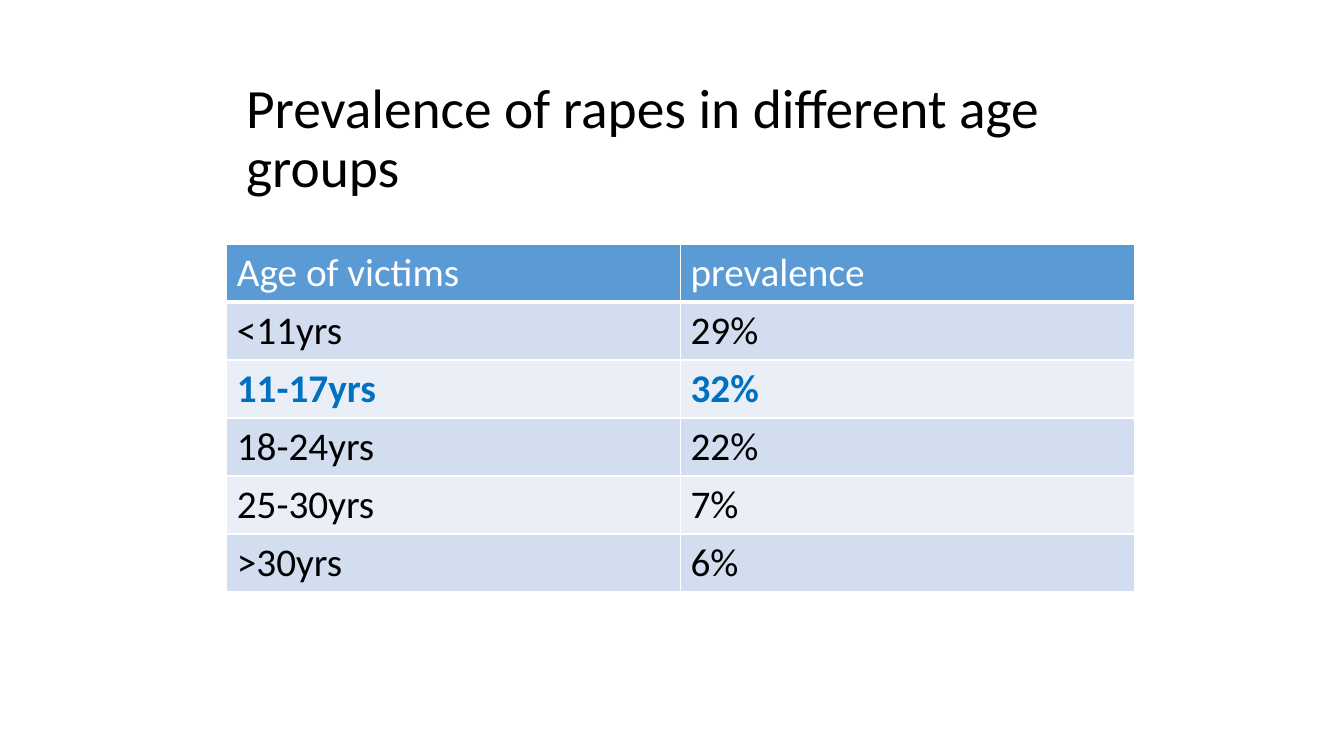
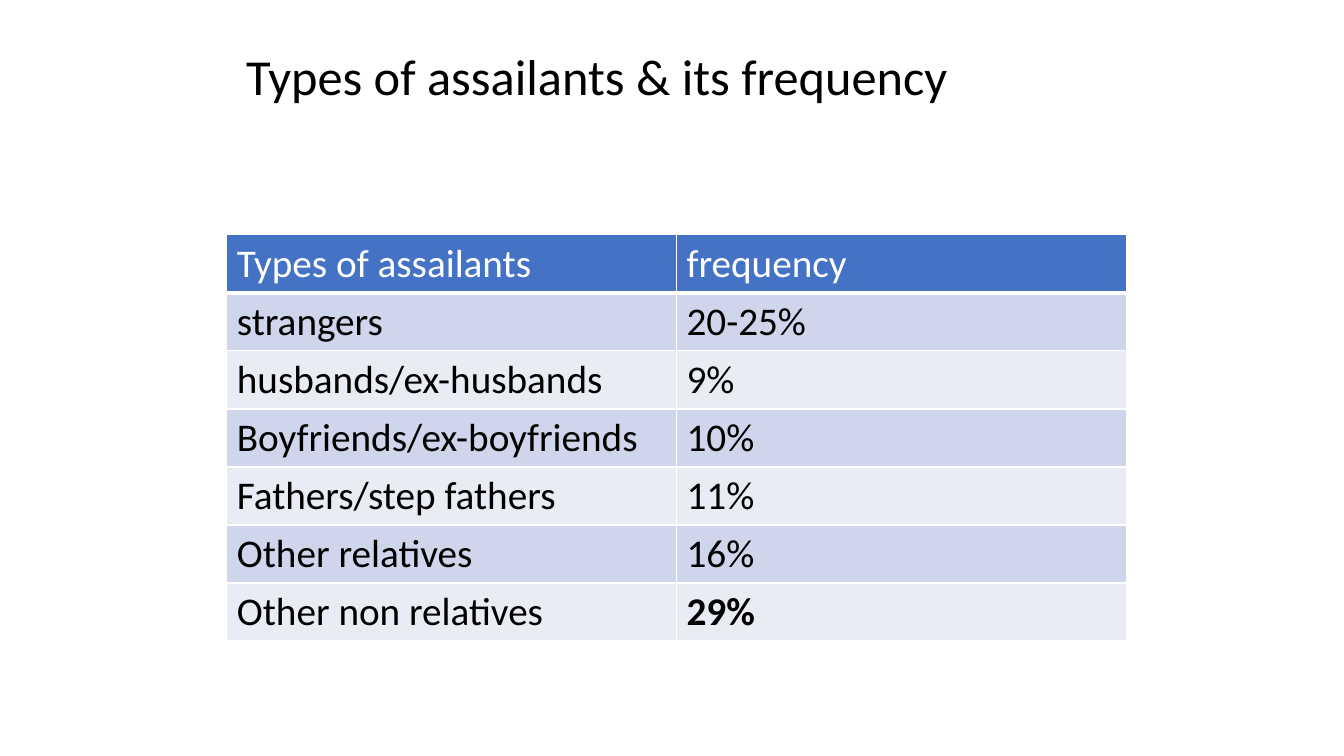
from dataclasses import dataclass

from lxml.etree import SubElement
from pptx import Presentation
from pptx.dml.color import RGBColor
from pptx.enum.text import MSO_ANCHOR, MSO_AUTO_SIZE, PP_ALIGN
from pptx.oxml.ns import qn
from pptx.util import Inches, Pt


@dataclass(frozen=True)
class Theme:
    font: str = "Calibri"
    text: str = "000000"
    on_header: str = "FFFFFF"
    rule: str = "FFFFFF"
    accent: str = "0070C0"
    # header, odd rows, even rows
    sky: tuple = ("5B9BD5", "D2DEEF", "EAEFF7")
    royal: tuple = ("4472C4", "CFD5EA", "E9EBF5")
    table_size: float = 28
    rule_width: float = 1
    header_rule_width: float = 3


THEME = Theme()
SLIDE_SIZE = (13.33, 7.5)
TITLE_LEFT, TITLE_WIDTH, TITLE_HEIGHT = 2.34, 8.92, 1.08
TABLE_LEFT, ROW_HEIGHT = 2.25, 0.57
TITLE_ONLY = 5

AGE_ROWS = [
    ("Age of victims", "prevalence"),
    ("<11yrs", "29%"),
    ("11-17yrs", "32%"),
    ("18-24yrs", "22%"),
    ("25-30yrs", "7%"),
    (">30yrs", "6%"),
]
AGE_PEAK = {"bold": True, "color": THEME.accent}

ASSAILANT_ROWS = [
    ("Types of assailants", "frequency"),
    ("strangers", "20-25%"),
    ("husbands/ex-husbands", "9%"),
    ("Boyfriends/ex-boyfriends", "10%"),
    ("Fathers/step fathers", "11%"),
    ("Other relatives", "16%"),
    ("Other non relatives", "29%"),
]


def set_attributes(target, values):
    for name, value in values.items():
        setattr(target, name, value)


def style_font(font, size, color=THEME.text, bold=False):
    set_attributes(font, {"name": THEME.font, "size": Pt(size), "bold": bold})
    font.color.rgb = RGBColor.from_string(color)


def add_title(slide, text, top, size):
    title = slide.shapes.title
    set_attributes(title, {
        "left": Inches(TITLE_LEFT),
        "top": Inches(top),
        "width": Inches(TITLE_WIDTH),
        "height": Inches(TITLE_HEIGHT),
    })
    frame = title.text_frame
    set_attributes(frame, {
        "text": text,
        "word_wrap": True,
        "auto_size": MSO_AUTO_SIZE.NONE,
        "vertical_anchor": MSO_ANCHOR.MIDDLE,
    })
    paragraph = frame.paragraphs[0]
    set_attributes(paragraph, {"alignment": PP_ALIGN.LEFT, "line_spacing": 0.9})
    style_font(paragraph.runs[0].font, size)


def add_borders(cell, bottom_width):
    """Rule all four sides; call before filling, as the schema puts lines first."""
    properties = cell._tc.get_or_add_tcPr()
    widths = dict.fromkeys(("lnL", "lnR", "lnT"), THEME.rule_width)
    widths["lnB"] = bottom_width
    for side, width in widths.items():
        line = SubElement(properties, qn(f"a:{side}"), w=str(Pt(width)))
        fill = SubElement(line, qn("a:solidFill"))
        SubElement(fill, qn("a:srgbClr"), val=THEME.rule)


def fill_cell(cell, text, background, bottom_width, **font_format):
    add_borders(cell, bottom_width)
    cell.fill.solid()
    cell.fill.fore_color.rgb = RGBColor.from_string(background)
    cell.text = text
    style_font(cell.text_frame.paragraphs[0].runs[0].font,
               THEME.table_size, **font_format)


def add_banded_table(slide, rows, top, width, palette, emphasis):
    """Draw a header and banded rows; emphasis maps (row, column) to a font format."""
    header, odd, even = palette
    column_count = len(rows[0])
    table = slide.shapes.add_table(
        len(rows), column_count, Inches(TABLE_LEFT), Inches(top),
        Inches(width), Inches(ROW_HEIGHT * len(rows))).table
    set_attributes(table, {"first_row": False, "horz_banding": False})
    for column in table.columns:
        column.width = Inches(width / column_count)
    for r, values in enumerate(rows):
        if r == 0:
            background, bottom = header, THEME.header_rule_width
            row_format = {"color": THEME.on_header}
        else:
            background, bottom = (odd if r % 2 else even), THEME.rule_width
            row_format = {}
        for c, value in enumerate(values):
            font_format = {**row_format, **emphasis.get((r, c), {})}
            fill_cell(table.cell(r, c), value, background, bottom, **font_format)


def main():
    deck = Presentation()
    deck.slide_width, deck.slide_height = map(Inches, SLIDE_SIZE)
    layout = deck.slide_layouts[TITLE_ONLY]

    ages = deck.slides.add_slide(layout)
    add_title(ages, "Prevalence of rapes in different age groups", 0.85, 39.6)
    add_banded_table(ages, AGE_ROWS, 2.42, 9, THEME.sky,
                     {(2, 0): AGE_PEAK, (2, 1): AGE_PEAK})

    assailants = deck.slides.add_slide(layout)
    add_title(assailants, "Types of assailants & its frequency", 0.25, 36)
    add_banded_table(assailants, ASSAILANT_ROWS, 2.33, 8.92, THEME.royal,
                     {(6, 1): {"bold": True}})

    deck.save("out.pptx")


if __name__ == "__main__":
    main()
